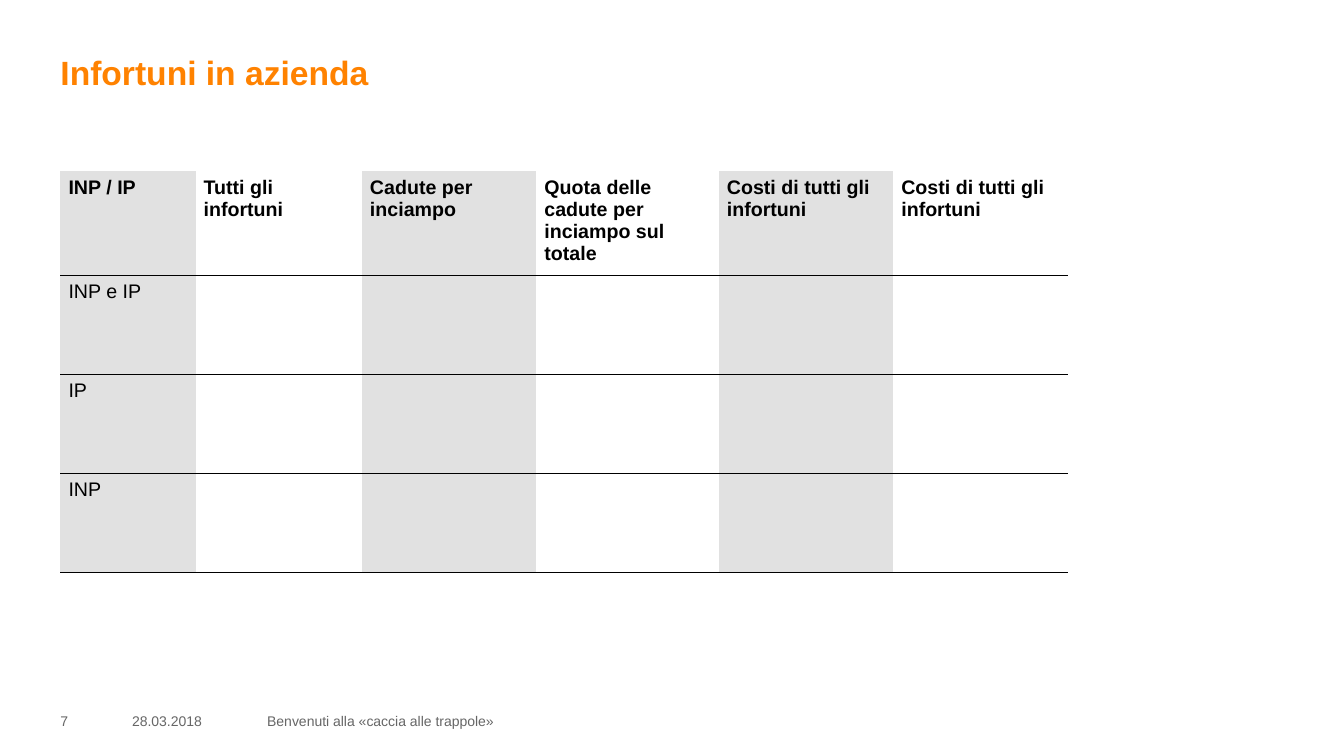
import pptx
import pptx.dml.color
import pptx.enum.text
import pptx.oxml
import pptx.oxml.ns
import pptx.util

Inches = pptx.util.Inches
Pt = pptx.util.Pt

ORANGE, BLACK, GREY, SHADE = "FF8200", "000000", "666666", "E1E1E1"
LEFT = 0.6
COLUMN_WIDTHS = [1.34, 1.65, 1.73, 1.81, 1.73, 1.73]
ROW_HEIGHTS = [0.97, 0.98, 0.98, 0.98]
HEADINGS = [
    "INP / IP",
    "Tutti gli infortuni",
    "Cadute per inciampo",
    "Quota delle cadute per inciampo sul totale",
    "Costi di tutti gli infortuni",
    "Costi di tutti gli infortuni",
]
ROW_LABELS = ["INP e IP", "IP", "INP"]
FOOTER = [
    (LEFT, 0.55, "7"),
    (1.31, 1.18, "28.03.2018"),
    (2.65, 8.58, "Benvenuti alla «caccia alle trappole»"),
]


def color(value):
    return pptx.dml.color.RGBColor.from_string(value)


class PageBuilder:
    font_name = "Arial"

    def __init__(self, page):
        self.page = page

    def style(self, frame, size, ink, bold=False):
        for para in frame.paragraphs:
            for item in (para, *para.runs):
                item.font.name = self.font_name
                item.font.size = Pt(size)
                item.font.bold = bold
                item.font.color.rgb = color(ink)

    def text(self, left, top, width, height, words, size, ink, bold=False, middle=False):
        box = self.page.shapes.add_textbox(
            Inches(left), Inches(top), Inches(width), Inches(height))
        frame = box.text_frame
        frame.word_wrap = True
        frame.margin_left = frame.margin_right = 0
        frame.margin_top = frame.margin_bottom = 0
        anchors = pptx.enum.text.MSO_ANCHOR
        frame.vertical_anchor = anchors.MIDDLE if middle else anchors.TOP
        frame.text = words
        self.style(frame, size, ink, bold)

    def border(self, cell, side, visible):
        """Rule one side of a cell in black, or clear it."""
        if visible:
            paint = f'<a:solidFill><a:srgbClr val="{BLACK}"/></a:solidFill>'
        else:
            paint = "<a:noFill/>"
        line = pptx.oxml.parse_xml(
            f'<a:ln{side} {pptx.oxml.ns.nsdecls("a")} w="{Pt(0.67)}">{paint}</a:ln{side}>')
        cell._tc.get_or_add_tcPr().append(line)

    def table(self, left, top, widths, heights, rows):
        """Draw a table with shaded alternate columns and ruled rows."""
        table = self.page.shapes.add_table(
            len(heights), len(widths), Inches(left), Inches(top),
            Inches(sum(widths)), Inches(sum(heights))).table
        table.horz_banding = False
        for column, width in zip(table.columns, widths):
            column.width = Inches(width)
        for row_index, (row, height) in enumerate(zip(table.rows, heights)):
            row.height = Inches(height)
            for column_index, cell in enumerate(row.cells):
                cell.margin_left = cell.margin_right = Inches(0.08)
                cell.margin_top = cell.margin_bottom = Inches(0.05)
                for side in "LRTB":
                    self.border(cell, side, side == "B" or (side == "T" and row_index > 0))
                if column_index % 2 == 0:
                    cell.fill.solid()
                    cell.fill.fore_color.rgb = color(SHADE)
                else:
                    cell.fill.background()
                cell.text_frame.text = rows[row_index][column_index]
                self.style(cell.text_frame, 14, BLACK, bold=row_index == 0)


def main():
    deck = pptx.Presentation()
    deck.slide_width, deck.slide_height = Inches(13.33), Inches(7.5)
    builder = PageBuilder(deck.slides.add_slide(deck.slide_layouts[6]))

    builder.text(LEFT, 0.52, 12.13, 0.94, "Infortuni in azienda", 24, ORANGE, bold=True)
    blanks = [""] * (len(HEADINGS) - 1)
    rows = [HEADINGS] + [[label] + blanks for label in ROW_LABELS]
    builder.table(LEFT, 1.7, COLUMN_WIDTHS, ROW_HEIGHTS, rows)
    for left, width, words in FOOTER:
        builder.text(left, 7.05, width, 0.2, words, 10, GREY, middle=True)

    deck.save("out.pptx")


if __name__ == "__main__":
    main()
